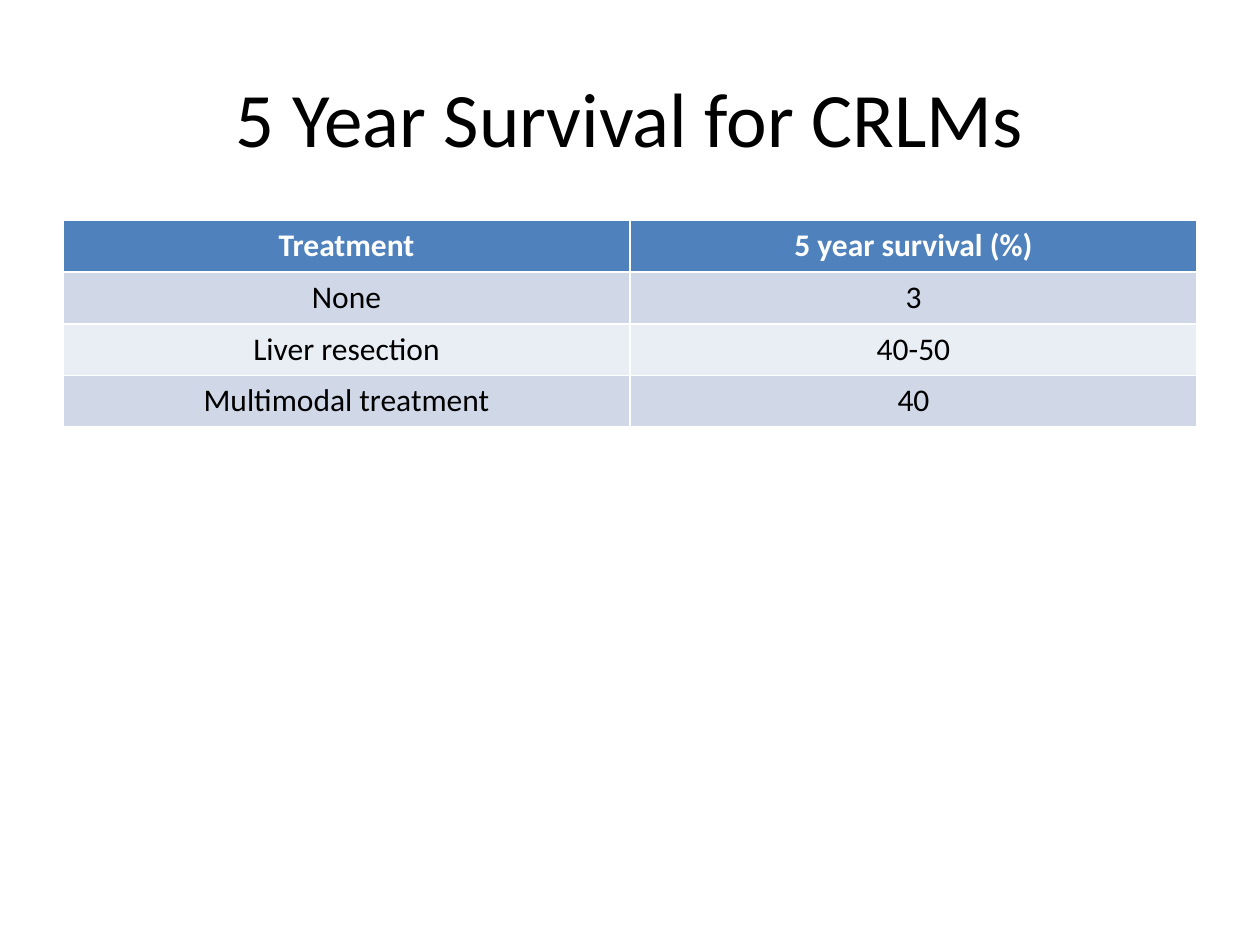
from dataclasses import dataclass
from typing import NamedTuple

from pptx import Presentation
from pptx.dml.color import RGBColor as Color
from pptx.enum.text import MSO_ANCHOR as Anchor, PP_ALIGN as Align
from pptx.util import Inches, Pt


@dataclass(frozen=True)
class Theme:
    font: str = "Calibri"
    title_size: int = 44
    table_size: int = 18
    text: str = "000000"
    header_text: str = "FFFFFF"
    header_fill: str = "4F81BD"
    band_fills: tuple[str, str] = ("D0D8E8", "E9EDF4")


class Outcome(NamedTuple):
    treatment: str
    survival: str


THEME = Theme()
WIDTH, HEIGHT = Inches(10), Inches(7.5)
MARGIN = int(WIDTH * 0.05)
CONTENT_WIDTH = WIDTH - 2 * MARGIN
ROW_HEIGHT = Inches(0.41)

HEADER = Outcome("Treatment", "5 year survival (%)")
OUTCOMES = [
    Outcome("None", "3"),
    Outcome("Liver resection", "40-50"),
    Outcome("Multimodal treatment", "40"),
]


def write(frame, text: str, size: int, color: str, bold: bool = False) -> None:
    para = frame.paragraphs[0]
    para.text = text
    para.alignment = Align.CENTER
    para.font.name = THEME.font
    para.font.size = Pt(size)
    para.font.bold = bold
    para.font.color.rgb = Color.from_string(color)


def add_title(page, text: str) -> None:
    box = page.shapes.add_textbox(
        MARGIN, int(HEIGHT * 0.04), CONTENT_WIDTH, Inches(1.25)
    )
    box.text_frame.word_wrap = True
    box.text_frame.vertical_anchor = Anchor.MIDDLE
    write(box.text_frame, text, THEME.title_size, THEME.text)


def add_outcome_table(page, header: Outcome, outcomes: list[Outcome]) -> None:
    rows = [header, *outcomes]
    table = page.shapes.add_table(
        len(rows), len(header), MARGIN, Inches(1.75),
        CONTENT_WIDTH, ROW_HEIGHT * len(rows),
    ).table
    for row_index, outcome in enumerate(rows):
        is_header = row_index == 0
        fill = THEME.header_fill if is_header else THEME.band_fills[(row_index - 1) % 2]
        color = THEME.header_text if is_header else THEME.text
        for cell, text in zip(table.rows[row_index].cells, outcome):
            cell.fill.solid()
            cell.fill.fore_color.rgb = Color.from_string(fill)
            write(cell.text_frame, text, THEME.table_size, color, is_header)


def main() -> None:
    deck = Presentation()
    deck.slide_width, deck.slide_height = WIDTH, HEIGHT
    page = deck.slides.add_slide(deck.slide_layouts[6])
    add_title(page, "5 Year Survival for CRLMs")
    add_outcome_table(page, HEADER, OUTCOMES)
    deck.save("out.pptx")


if __name__ == "__main__":
    main()
